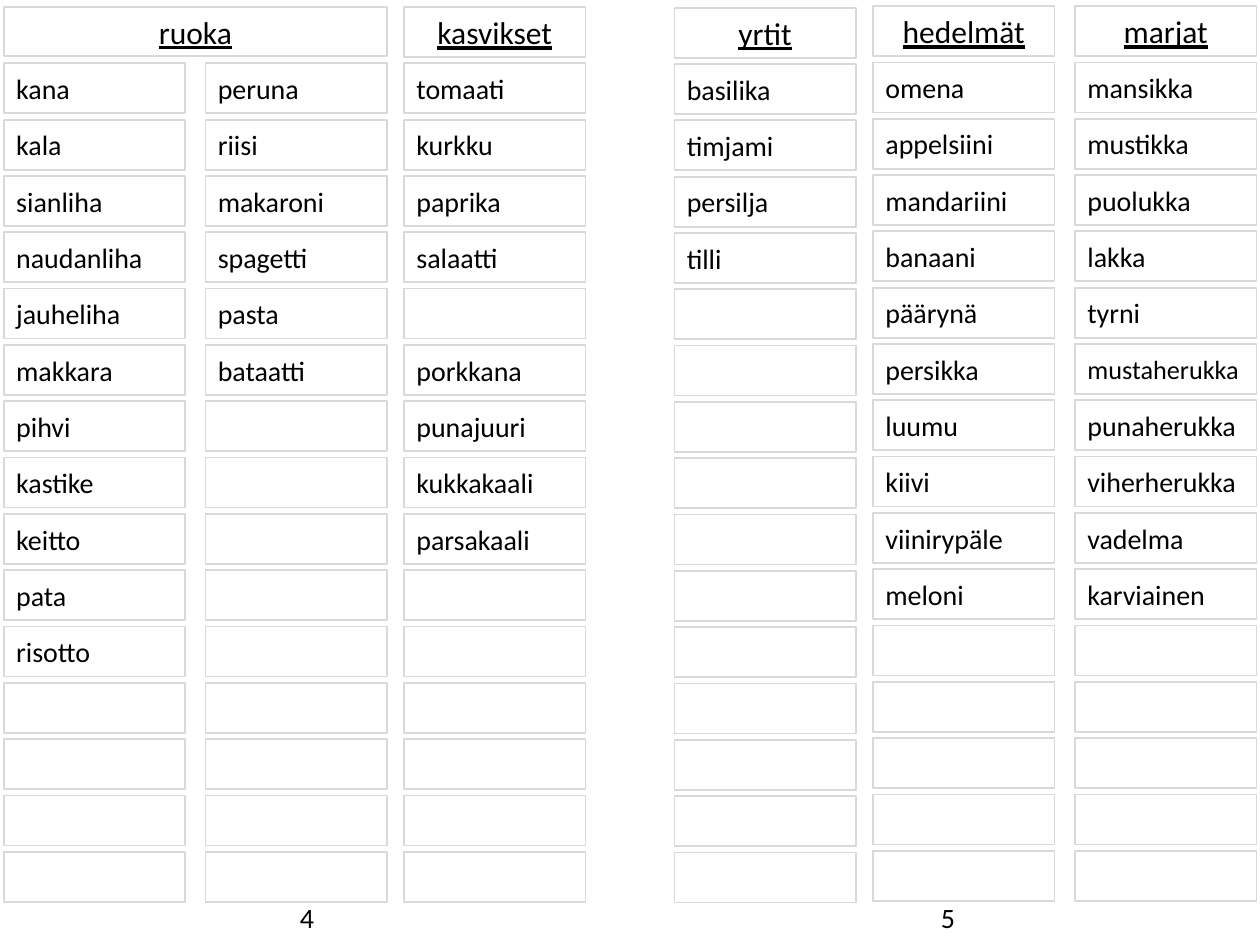
import pptx
import pptx.dml.color
import pptx.enum.shapes
import pptx.enum.text
import pptx.util

Pt = pptx.util.Pt
ALIGN = pptx.enum.text.PP_ALIGN

BLACK = pptx.dml.color.RGBColor(0x00, 0x00, 0x00)
GREY = pptx.dml.color.RGBColor(0xD9, 0xD9, 0xD9)
FONT = "Calibri"

# Grid, in points
CELL_WIDTH = 103.7
CELL_HEIGHT = 28.6
ROW_PITCH = 32.18
ROW_COUNT = 15

# Left edge, top of the heading, heading, words from top to bottom
COLUMNS = [
    (2.2, 4, None,
     ["kana", "kala", "sianliha", "naudanliha", "jauheliha", "makkara",
      "pihvi", "kastike", "keitto", "pata", "risotto"]),
    (117.4, 4, None,
     ["peruna", "riisi", "makaroni", "spagetti", "pasta", "bataatti"]),
    (230.9, 4, "kasvikset",
     ["tomaati", "kurkku", "paprika", "salaatti", "", "porkkana",
      "punajuuri", "kukkakaali", "parsakaali"]),
    (385.4, 4.4, "yrtit",
     ["basilika", "timjami", "persilja", "tilli"]),
    (498.9, 3.5, "hedelmät",
     ["omena", "appelsiini", "mandariini", "banaani", "päärynä", "persikka",
      "luumu", "kiivi", "viinirypäle", "meloni"]),
    (614.3, 3.5, "marjat",
     ["mansikka", "mustikka", "puolukka", "lakka", "tyrni", "mustaherukka",
      "punaherukka", "viherherukka", "vadelma", "karviainen"]),
]
SMALLER_WORDS = {"mustaherukka": 15}
PAGE_NUMBERS = [("4", 164.2, 20.2), ("5", 530.6, 25.9)]


def write_text(shape, text, size=16, align=ALIGN.LEFT, underline=False,
               anchor=pptx.enum.text.MSO_ANCHOR.MIDDLE, wrap=True):
    frame = shape.text_frame
    frame.word_wrap = wrap
    frame.auto_size = pptx.enum.text.MSO_AUTO_SIZE.NONE
    frame.vertical_anchor = anchor
    paragraph = frame.paragraphs[0]
    paragraph.alignment = align
    run = paragraph.add_run()
    run.text = text
    run.font.name = FONT
    run.font.size = Pt(size)
    run.font.underline = underline
    run.font.color.rgb = BLACK


def write_heading(shape, text):
    write_text(shape, text, size=18, align=ALIGN.CENTER, underline=True)


def outline(shape):
    shape.fill.background()
    shape.line.color.rgb = GREY
    shape.line.width = Pt(1)


def add_cell(slide, left, top):
    cell = slide.shapes.add_shape(
        pptx.enum.shapes.MSO_SHAPE.RECTANGLE,
        Pt(left), Pt(top), Pt(CELL_WIDTH), Pt(CELL_HEIGHT))
    cell.shadow.inherit = False
    outline(cell)
    return cell


def add_title(slide, text):
    """Place the title across the first two columns."""
    title = slide.shapes.title
    left, top = COLUMNS[0][:2]
    title.left, title.top = Pt(left), Pt(top)
    title.width = Pt(COLUMNS[1][0] + CELL_WIDTH - left)
    title.height = Pt(28)
    outline(title)
    write_heading(title, text)


def add_column(slide, left, top, heading, words):
    if heading:
        write_heading(add_cell(slide, left, top), heading)
    for row in range(ROW_COUNT):
        cell = add_cell(slide, left, top + (row + 1) * ROW_PITCH)
        word = words[row] if row < len(words) else ""
        if word:
            write_text(cell, word, size=SMALLER_WORDS.get(word, 16))


def add_page_number(slide, text, left, width):
    box = slide.shapes.add_textbox(Pt(left), Pt(511.2), Pt(width), Pt(26.6))
    write_text(box, text, anchor=pptx.enum.text.MSO_ANCHOR.TOP)


def main():
    presentation = pptx.Presentation()
    presentation.slide_width = Pt(720)
    presentation.slide_height = Pt(540)
    title_only = presentation.slide_layouts[5]
    slide = presentation.slides.add_slide(title_only)

    # Page numbers of the spread
    for text, left, width in PAGE_NUMBERS:
        add_page_number(slide, text, left, width)

    # Word lists
    add_title(slide, "ruoka")
    for left, top, heading, words in COLUMNS:
        add_column(slide, left, top, heading, words)

    presentation.save("out.pptx")


if __name__ == "__main__":
    main()
